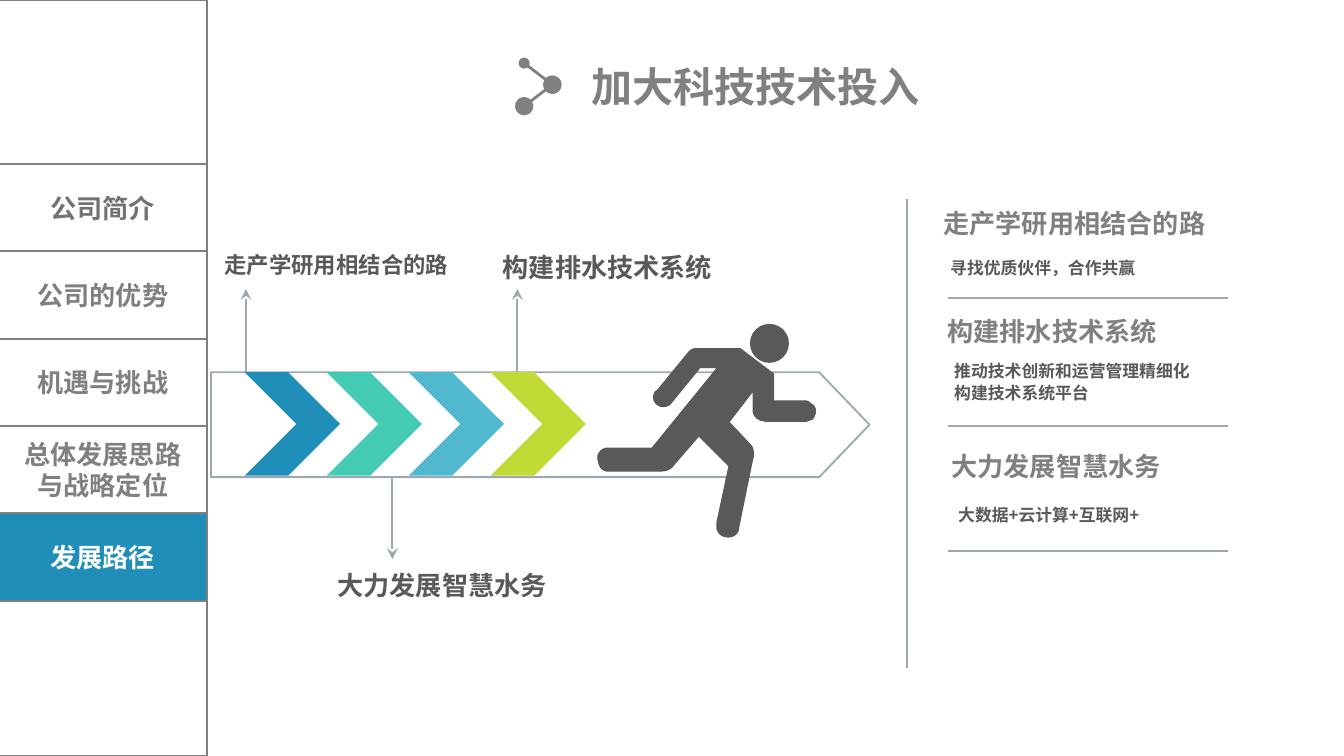
import pptx
import pptx.dml.color
import pptx.enum.shapes
import pptx.enum.text
import pptx.oxml
import pptx.oxml.ns
import pptx.util

Inches = pptx.util.Inches
SHAPES = pptx.enum.shapes.MSO_SHAPE
FONT = "Noto Sans CJK SC"
PAGE_WIDTH = 10
PAGE_HEIGHT = PAGE_WIDTH * 9 / 16
COLORS = {
    "blue": "1F8EB9", "teal": "43CBB3", "sky": "50B9CF", "lime": "C1DA36",
    "dark": "595959", "gray": "808080", "warm": "767171", "rule": "9DA8B1",
    "white": "FFFFFF",
}
# Hundredths of an inch: a pair is a corner, three pairs are a Bezier curve.
RUNNER_START = (8, 74)
RUNNER_OUTLINE = [
    (11, 74), (42, 74), (90, 15), (78, 15), (56, 42),
    ((55, 43), (53, 44), (50, 44)), ((47, 44), (43, 41), (43, 37)),
    ((43, 34), (44, 32), (46, 31)), (69, 3), ((71, 1), (72, 0), (75, 0)),
    (108, 0), (133, 19), (133, 39), (157, 39),
    ((159, 39), (160, 41), (162, 42)), ((165, 44), (165, 49), (162, 53)),
    ((160, 54), (159, 54), (157, 55)), (127, 55),
    ((117, 54), (117, 47), (117, 47)), (117, 33), (100, 55), (116, 72),
    ((116, 72), (120, 76), (117, 85)), (107, 134),
    ((107, 139), (102, 141), (99, 141)), ((93, 141), (90, 137), (90, 133)),
    (90, 130), (99, 88), (77, 66), (58, 88), ((58, 88), (56, 92), (48, 92)),
    (10, 92), ((6, 92), (3, 90), (2, 85)), ((0, 80), (3, 75), (8, 74)),
]


def rgb(name):
    return pptx.dml.color.RGBColor.from_string(COLORS[name])


def write_text(frame, text, size=14, color="gray", align=None, spacing=None):
    """Fill a text frame, one paragraph for each line of text."""
    for index, line in enumerate(text.split("\n")):
        para = frame.add_paragraph() if index else frame.paragraphs[0]
        para.alignment = align
        para.line_spacing = spacing
        span = para.add_run()
        span.text = line
        span.font.size = pptx.util.Pt(size)
        span.font.bold = True
        span.font.name = FONT
        span.font.color.rgb = rgb(color)
        east_asian = pptx.oxml.parse_xml(
            f'<a:ea {pptx.oxml.ns.nsdecls("a")} typeface="{FONT}"/>')
        span.font._element.append(east_asian)


def add_label(page, left, top, width, height, text, wrap=False, **style):
    box = page.shapes.add_textbox(
        Inches(left), Inches(top), Inches(width), Inches(height))
    frame = box.text_frame
    frame.word_wrap = wrap
    frame.auto_size = pptx.enum.text.MSO_AUTO_SIZE.SHAPE_TO_FIT_TEXT
    frame.margin_left = frame.margin_right = Inches(0.07)
    frame.margin_top = frame.margin_bottom = Inches(0.04)
    write_text(frame, text, **style)


def paint(shape, fill=None, line=None):
    shape.shadow.inherit = False
    if fill:
        shape.fill.solid()
        shape.fill.fore_color.rgb = rgb(fill)
    else:
        shape.fill.background()
    if line:
        shape.line.color.rgb = rgb(line)
        shape.line.width = pptx.util.Pt(1)
    else:
        shape.line.fill.background()


def add_shape(page, kind, left, top, width, height, fill=None, line=None, adjust=None):
    shape = page.shapes.add_shape(
        kind, Inches(left), Inches(top), Inches(width), Inches(height))
    paint(shape, fill, line)
    if adjust is not None:
        shape.adjustments[0] = adjust
    return shape


def add_line(page, start, end, color="rule", weight=1, head=None, tail=None):
    """Draw a straight line; head and tail are (type, size) of its ends."""
    line = page.shapes.add_connector(
        pptx.enum.shapes.MSO_CONNECTOR.STRAIGHT,
        *map(Inches, start), *map(Inches, end))
    line.line.color.rgb = rgb(color)
    line.line.width = pptx.util.Pt(weight)
    namespace = pptx.oxml.ns.nsdecls("a")
    for tag, ending in (("headEnd", head), ("tailEnd", tail)):
        if ending:
            kind, size = ending
            line.line._get_or_add_ln().append(pptx.oxml.parse_xml(
                f'<a:{tag} {namespace} type="{kind}" w="{size}" len="{size}"/>'))
    line._element.spPr.append(pptx.oxml.parse_xml(f"<a:effectLst {namespace}/>"))


def add_runner(page, left, top):
    add_shape(page, SHAPES.OVAL, left + 1.15, top - 0.18, 0.29, 0.29, fill="dark")

    def place(x, y):
        return Inches(left + x / 100), Inches(top + y / 100)

    builder = page.shapes.build_freeform(*place(*RUNNER_START), scale=1)
    points, current = [], RUNNER_START
    for part in RUNNER_OUTLINE:
        if len(part) == 2:
            points.append(place(*part))
            current = part
            continue
        first, second, end = part
        for step in range(1, 7):
            t = step / 6
            points.append(place(*(
                (1 - t) ** 3 * a + 3 * (1 - t) ** 2 * t * b
                + 3 * (1 - t) * t ** 2 * c + t ** 3 * d
                for a, b, c, d in zip(current, first, second, end))))
        current = end
    builder.add_line_segments(points, close=True)
    paint(builder.convert_to_shape(), fill="dark")


def add_roadmap(page, left, top, width, height):
    """Arrow band with chevrons, a runner and labelled pointers."""
    add_shape(page, SHAPES.PENTAGON, left, top, width, height,
              line="rule", adjust=0.48)
    for index, color in enumerate(("blue", "teal", "sky", "lime")):
        add_shape(page, SHAPES.CHEVRON, left + 0.25 + 0.61 * index, top,
                  0.71, height - 0.01, fill=color, adjust=0.544)
    add_runner(page, left + 2.86, top - 0.18)
    for x, tip, base in ((2.28, -0.62, 0), (0.26, -0.62, 0), (1.35, 1.39, 0.77)):
        add_line(page, (left + x, top + tip), (left + x, top + base),
                 head=("stealth", "med"))
    labels = (
        (0.03, -0.94, 1.83, 0.28, "走产学研用相结合的路", 12),
        (2.1, -0.94, 1.72, 0.31, "构建排水技术系统", 14),
        (0.87, 1.43, 1.72, 0.31, "大力发展智慧水务", 14),
    )
    for x, y, label_width, label_height, text, size in labels:
        add_label(page, left + x, top + y, label_width, label_height, text,
                  size=size, color="dark")


def add_details(page, left, top, height):
    """Vertical rule with three headed notes to its right."""
    add_line(page, (left, top), (left, top + height))
    # Heading x, y, width; note x, y, width, height; rule y; heading; note
    notes = (
        (0.2, 0.02, 2.68, 0.25, 0.38, 2.15, 0.23, 0.74,
         "走产学研用相结合的路", "寻找优质伙伴，合作共赢"),
        (0.23, 0.83, 2.17, 0.28, 1.15, 2.15, 0.41, 1.69,
         "构建排水技术系统", "推动技术创新和运营管理精细化\n构建技术系统平台"),
        (0.26, 1.83, 2.17, 0.31, 2.22, 2.24, 0.24, 2.62,
         "大力发展智慧水务", "大数据+云计算+互联网+"),
    )
    for (head_x, head_y, head_width, note_x, note_y, note_width, note_height,
         rule_y, heading, note) in notes:
        add_line(page, (left + 0.3, top + rule_y), (left + 2.39, top + rule_y))
        add_label(page, left + head_x, top + head_y, head_width, 0.38, heading)
        add_label(page, left + note_x, top + note_y, note_width, note_height, note,
                  wrap=True, size=9, color="dark", spacing=1.1)


def add_title(page, left, top):
    middle = (left + 0.21, top + 0.21)
    large = ("oval", "lg")
    add_line(page, (left, top + 0.05), middle, "gray", 1.5, ("oval", "med"), large)
    add_line(page, middle, (left, top + 0.37), "gray", 1.5, large, large)
    add_label(page, left + 0.43, top, 2.63, 0.45, "加大科技技术投入", size=22)


def add_sidebar(page, left, top, width, height):
    add_shape(page, SHAPES.RECTANGLE, left, top, width, height, line="gray")
    items = (
        ("公司简介", "warm", None), ("公司的优势", "gray", None),
        ("机遇与挑战", "gray", None), ("总体发展思路与战略定位", "gray", None),
        ("发展路径", "white", "blue"),
    )
    item_height = 0.65
    for index, (text, color, fill) in enumerate(items):
        item = add_shape(page, SHAPES.RECTANGLE, left, top + 1.22 + item_height * index,
                         width, item_height, fill=fill, line="gray")
        item.text_frame.word_wrap = True
        item.text_frame.vertical_anchor = pptx.enum.text.MSO_ANCHOR.MIDDLE
        write_text(item.text_frame, text, color=color,
                   align=pptx.enum.text.PP_ALIGN.CENTER)


def main():
    deck = pptx.Presentation()
    deck.slide_width, deck.slide_height = Inches(PAGE_WIDTH), Inches(PAGE_HEIGHT)
    page = deck.slides.add_slide(deck.slide_layouts[6])
    add_roadmap(page, 1.57, 2.77, 4.9, 0.78)
    add_details(page, 6.75, 1.48, 3.49)
    add_title(page, 3.9, 0.42)
    add_sidebar(page, -0.01, 0, 1.55, PAGE_HEIGHT)
    deck.save("out.pptx")


if __name__ == "__main__":
    main()
